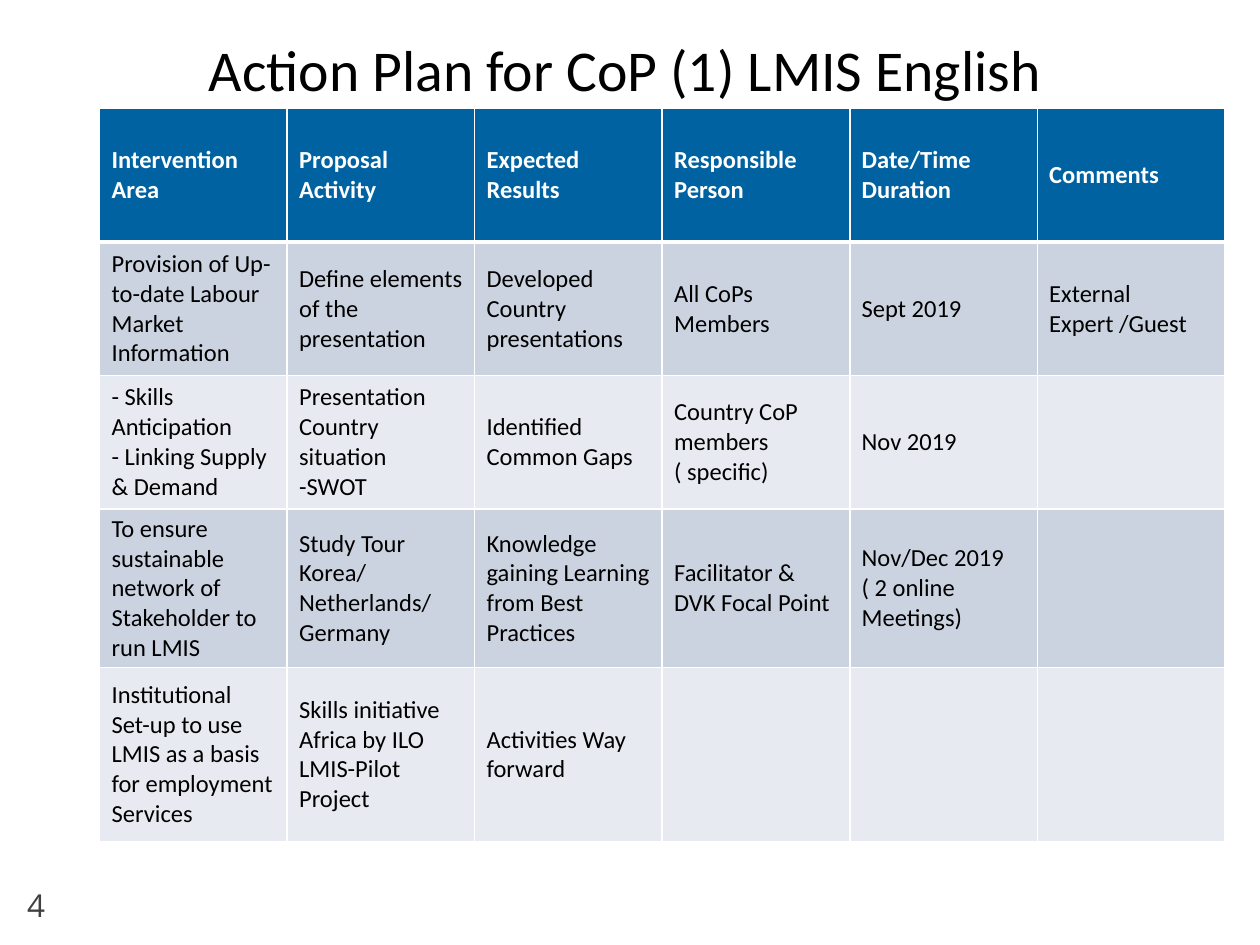
from lxml.etree import SubElement
from pptx import Presentation
from pptx.dml.color import RGBColor
from pptx.enum.shapes import MSO_SHAPE
from pptx.enum.text import MSO_ANCHOR, PP_ALIGN
from pptx.oxml.ns import qn
from pptx.util import Cm, Pt

COLORS = {
    "white": "FFFFFF",
    "black": "000000",
    "number": "404040",
    "header": "0062A1",
    "odd_row": "CCD3E0",
    "even_row": "E7EAF0",
}
COLUMN_WIDTH = 3.78
ROW_HEIGHTS = [2.69, 2.69, 2.69, 3.2, 3.5]
PLAN = [
    ["Intervention Area", "Proposal Activity", "Expected Results",
     "Responsible Person", "Date/Time Duration", "Comments"],
    ["Provision of Up- to-date Labour Market Information",
     "Define elements of the presentation",
     "Developed Country presentations", "All CoPs Members",
     "Sept 2019", "External Expert /Guest"],
    ["- Skills Anticipation\v- Linking Supply & Demand",
     "Presentation Country situation\n-SWOT", "Identified Common Gaps",
     "Country CoP members\v( specific)", "Nov 2019", ""],
    ["To ensure sustainable network of Stakeholder to run LMIS",
     "Study Tour Korea/ Netherlands/ Germany",
     "Knowledge gaining Learning from Best Practices",
     "Facilitator & DVK Focal Point",
     "Nov/Dec 2019\n( 2 online Meetings)", ""],
    ["Institutional Set-up to use LMIS as a basis for employment Services",
     "Skills initiative Africa by ILO\nLMIS-Pilot Project",
     "Activities Way forward", "", "", ""],
]


def color(name):
    return RGBColor.from_string(COLORS[name])


def write(frame, text, size, color_name, font="Calibri", bold=False,
          align=PP_ALIGN.LEFT):
    frame.word_wrap = True
    for index, line in enumerate(text.split("\n")):
        para = frame.paragraphs[0] if index == 0 else frame.add_paragraph()
        para.alignment = align
        para.font.size = Pt(size)
        for part_index, part in enumerate(line.split("\v")):
            if part_index:
                para.add_line_break()
            if part:
                span = para.add_run()
                span.text = part
                span.font.name = font
                span.font.size = Pt(size)
                span.font.bold = bold
                span.font.color.rgb = color(color_name)


def add_title(page, text):
    box = page.shapes.add_shape(
        MSO_SHAPE.RECTANGLE, Cm(0.99), Cm(0.53), Cm(23.22), Cm(1.68))
    box.shadow.inherit = False
    box.fill.solid()
    box.fill.fore_color.rgb = color("white")
    box.line.fill.background()
    box.text_frame.vertical_anchor = MSO_ANCHOR.MIDDLE
    write(box.text_frame, text, 33, "black", align=PP_ALIGN.CENTER)


def add_page_number(page, text):
    box = page.shapes.add_textbox(Cm(0.3), Cm(17.73), Cm(1.4), Cm(1.02))
    box.text_frame.vertical_anchor = MSO_ANCHOR.BOTTOM
    write(box.text_frame, text, 18, "number", font="Open Sans")


def set_borders(cell, widths):
    properties = cell._tc.get_or_add_tcPr()
    for index, (side, width) in enumerate(widths.items()):
        line = properties.makeelement(qn(f"a:ln{side}"), {"w": str(Pt(width))})
        fill = SubElement(line, qn("a:solidFill"))
        SubElement(fill, qn("a:srgbClr"), val=COLORS["white"])
        properties.insert(index, line)


def fill_cell(cell, text, row):
    header = row == 0
    cell.vertical_anchor = MSO_ANCHOR.MIDDLE
    cell.margin_left = cell.margin_right = Cm(0.24)
    cell.margin_top = cell.margin_bottom = Cm(0.1)
    cell.fill.solid()
    fill = "header" if header else "odd_row" if row % 2 else "even_row"
    cell.fill.fore_color.rgb = color(fill)
    set_borders(cell, {"L": 1, "R": 1, "T": 3 if row == 1 else 1,
                       "B": 3 if header else 1})
    write(cell.text_frame, text, 14, "white" if header else "black",
          bold=header)


def add_plan(page):
    columns = len(PLAN[0])
    table = page.shapes.add_table(
        len(PLAN), columns, Cm(2.01), Cm(2.19),
        Cm(COLUMN_WIDTH * columns), Cm(sum(ROW_HEIGHTS))).table
    for column in table.columns:
        column.width = Cm(COLUMN_WIDTH)
    for row, (height, texts) in enumerate(zip(ROW_HEIGHTS, PLAN)):
        table.rows[row].height = Cm(height)
        for column, text in enumerate(texts):
            fill_cell(table.cell(row, column), text, row)


def main():
    deck = Presentation()
    deck.slide_width, deck.slide_height = Cm(25.4), Cm(19.05)
    page = deck.slides.add_slide(deck.slide_layouts[6])
    add_page_number(page, "4")
    add_title(page, "Action Plan for CoP (1) LMIS English")
    add_plan(page)
    deck.save("out.pptx")


if __name__ == "__main__":
    main()
